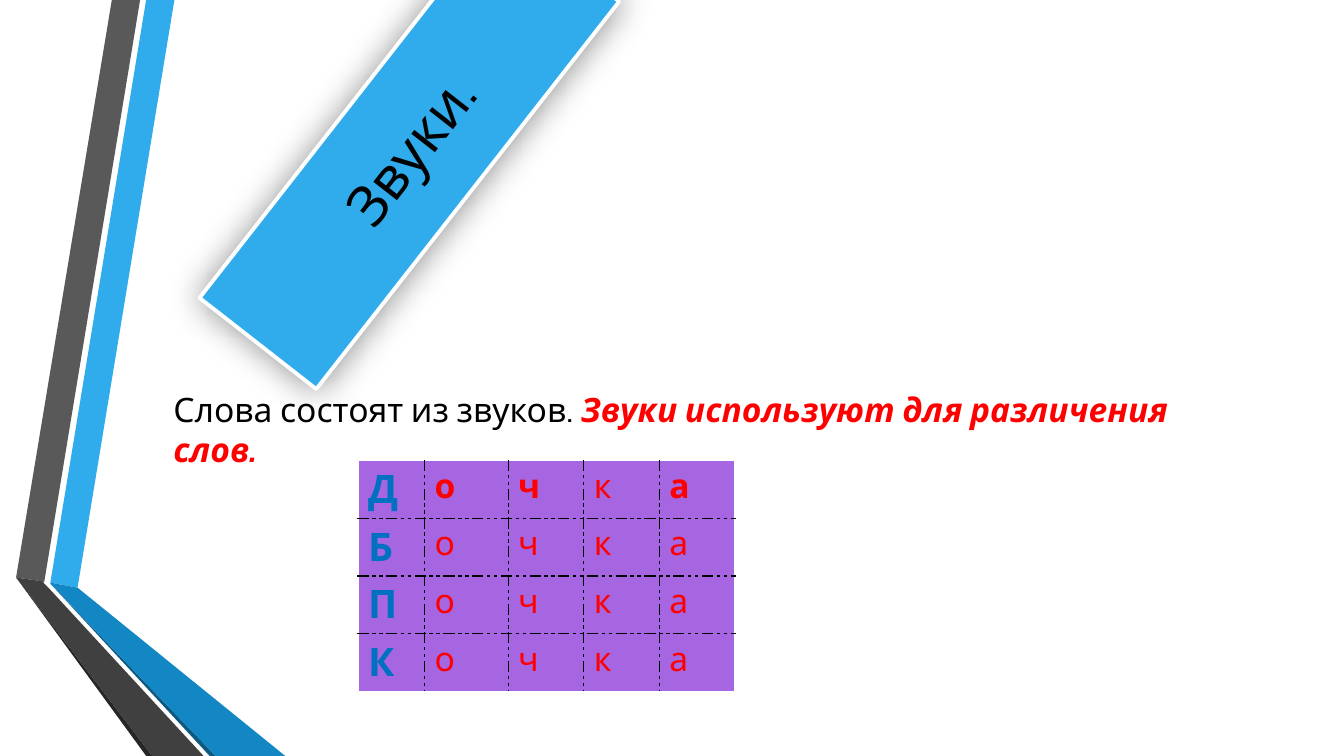
from lxml import etree
from pptx import Presentation
from pptx.dml.color import RGBColor
from pptx.enum.text import MSO_ANCHOR, MSO_AUTO_SIZE, PP_ALIGN
from pptx.oxml.ns import qn
from pptx.util import Inches, Pt

FONT = "Cabin"
BLACK, WHITE, RED = "000000", "FFFFFF", "FF0000"
SKY, LETTER_BLUE, PURPLE = "30ACEC", "0070C0", "A666E1"

TITLE = "Звуки."
STATEMENT = "Слова состоят из звуков. "
EMPHASIS = "Звуки используют для различения слов."
WORDS = ["Дочка", "Бочка", "Почка", "Кочка"]
BOLD_CELLS = {(0, 1), (0, 2), (0, 4)}
COLUMN_WIDTHS = [0.66, 0.83, 0.75, 0.75, 0.75]
ROW_HEIGHT = 0.57

RIBBONS = [
    (SKY, [(0.5, 5.78), (0.77, 5.83), (1.73, 0), (1.45, 0)]),
    ("595959", [(1.39, 0), (1.11, 0), (0.16, 5.73), (0.44, 5.77)]),
    ("262626", [(0.16, 5.73), (1.45, 7.5), (1.51, 7.5)]),
    ("0C5A82", [(0.5, 5.79), (2.08, 7.5), (2.14, 7.5)]),
    ("1287C3", [(0.5, 5.79), (2.14, 7.5), (2.83, 7.5), (0.77, 5.83), (0.5, 5.78)]),
    ("404040", [(2.02, 7.5), (0.48, 5.83), (0.43, 5.78), (0.44, 5.77),
                (0.16, 5.73), (1.51, 7.5)]),
]


def color(hex_value):
    return RGBColor.from_string(hex_value)


def write(paragraph, text, size=24, hex_value=BLACK, bold=False, italic=False):
    run = paragraph.add_run()
    run.text = text
    font = run.font
    font.name, font.size = FONT, Pt(size)
    font.bold, font.italic = bold, italic
    font.color.rgb = color(hex_value)


def place(shape, left, top, width, height):
    shape.left, shape.top = Inches(left), Inches(top)
    shape.width, shape.height = Inches(width), Inches(height)


def add_child(parent, tag, **attributes):
    child = etree.SubElement(parent, qn(tag))
    for name, value in attributes.items():
        child.set(name, str(value))
    return child


def draw_ribbon(shapes, fill, points):
    corners = [(Inches(x), Inches(y)) for x, y in points]
    builder = shapes.build_freeform(*corners[0])
    builder.add_line_segments(corners[1:], close=True)
    ribbon = builder.convert_to_shape()
    ribbon.shadow.inherit = False
    ribbon.fill.solid()
    ribbon.fill.fore_color.rgb = color(fill)
    ribbon.line.fill.background()


def draw_title(title):
    place(title, 1.62, 0.75, 4.88, 1.47)
    title.rotation = 308
    title.fill.solid()
    title.fill.fore_color.rgb = color(SKY)
    title.line.color.rgb = color(WHITE)
    title.line.width = Pt(2.75)
    title.shadow.inherit = False
    effects = title._element.spPr.find(qn("a:effectLst"))
    shadow = add_child(effects, "a:outerShdw", blurRad=Pt(25), dist=0, dir=45 * 60000)
    add_child(add_child(shadow, "a:srgbClr", val=BLACK), "a:alpha", val=43000)
    frame = title.text_frame
    frame.auto_size = MSO_AUTO_SIZE.NONE
    frame.vertical_anchor = MSO_ANCHOR.MIDDLE
    frame.paragraphs[0].alignment = PP_ALIGN.CENTER
    write(frame.paragraphs[0], TITLE, size=40)


def draw_statement(body):
    place(body, 1.62, 2.92, 10.23, 3.12)
    frame = body.text_frame
    frame.auto_size = MSO_AUTO_SIZE.NONE
    frame.vertical_anchor = MSO_ANCHOR.MIDDLE
    frame.margin_bottom = Inches(0.5)
    paragraph = frame.paragraphs[0]
    properties = paragraph._p.get_or_add_pPr()
    properties.set("marL", "0")
    properties.set("indent", "0")
    add_child(properties, "a:buNone")
    paragraph.space_before = Pt(0)
    write(paragraph, STATEMENT)
    write(paragraph, EMPHASIS, hex_value=RED, bold=True, italic=True)


def set_borders(cell, outer_sides):
    """Solid white on the table's edge, dashed black inside."""
    properties = cell._tc.get_or_add_tcPr()
    for side in "LRTB":
        outer = side in outer_sides
        line = add_child(properties, f"a:ln{side}", w=Pt(1))
        fill = add_child(line, "a:solidFill")
        add_child(fill, "a:srgbClr", val=WHITE if outer else BLACK)
        add_child(line, "a:prstDash", val="solid" if outer else "sysDashDotDot")


def draw_words(shapes):
    rows, columns = len(WORDS), len(COLUMN_WIDTHS)
    table = shapes.add_table(
        rows, columns, Inches(3.55), Inches(4.57),
        Inches(sum(COLUMN_WIDTHS)), Inches(rows * ROW_HEIGHT)).table
    table.first_row = table.horz_banding = False
    for column, width in zip(table.columns, COLUMN_WIDTHS):
        column.width = Inches(width)
    for r, word in enumerate(WORDS):
        table.rows[r].height = Inches(ROW_HEIGHT)
        for c, letter in enumerate(word):
            cell = table.cell(r, c)
            edges = {"L": c == 0, "R": c == columns - 1, "T": r == 0, "B": r == rows - 1}
            set_borders(cell, {side for side, on_edge in edges.items() if on_edge})
            cell.fill.solid()
            cell.fill.fore_color.rgb = color(PURPLE)
            first = c == 0
            write(cell.text_frame.paragraphs[0], letter, size=28 if first else 24,
                  hex_value=LETTER_BLUE if first else RED,
                  bold=first or (r, c) in BOLD_CELLS)


def main():
    deck = Presentation()
    deck.slide_width, deck.slide_height = Inches(13.33), Inches(7.5)
    slide = deck.slides.add_slide(deck.slide_layouts[1])
    for fill, points in RIBBONS:
        draw_ribbon(slide.shapes, fill, points)
    draw_title(slide.shapes.title)
    draw_statement(slide.placeholders[1])
    draw_words(slide.shapes)
    deck.save("out.pptx")


if __name__ == "__main__":
    main()
